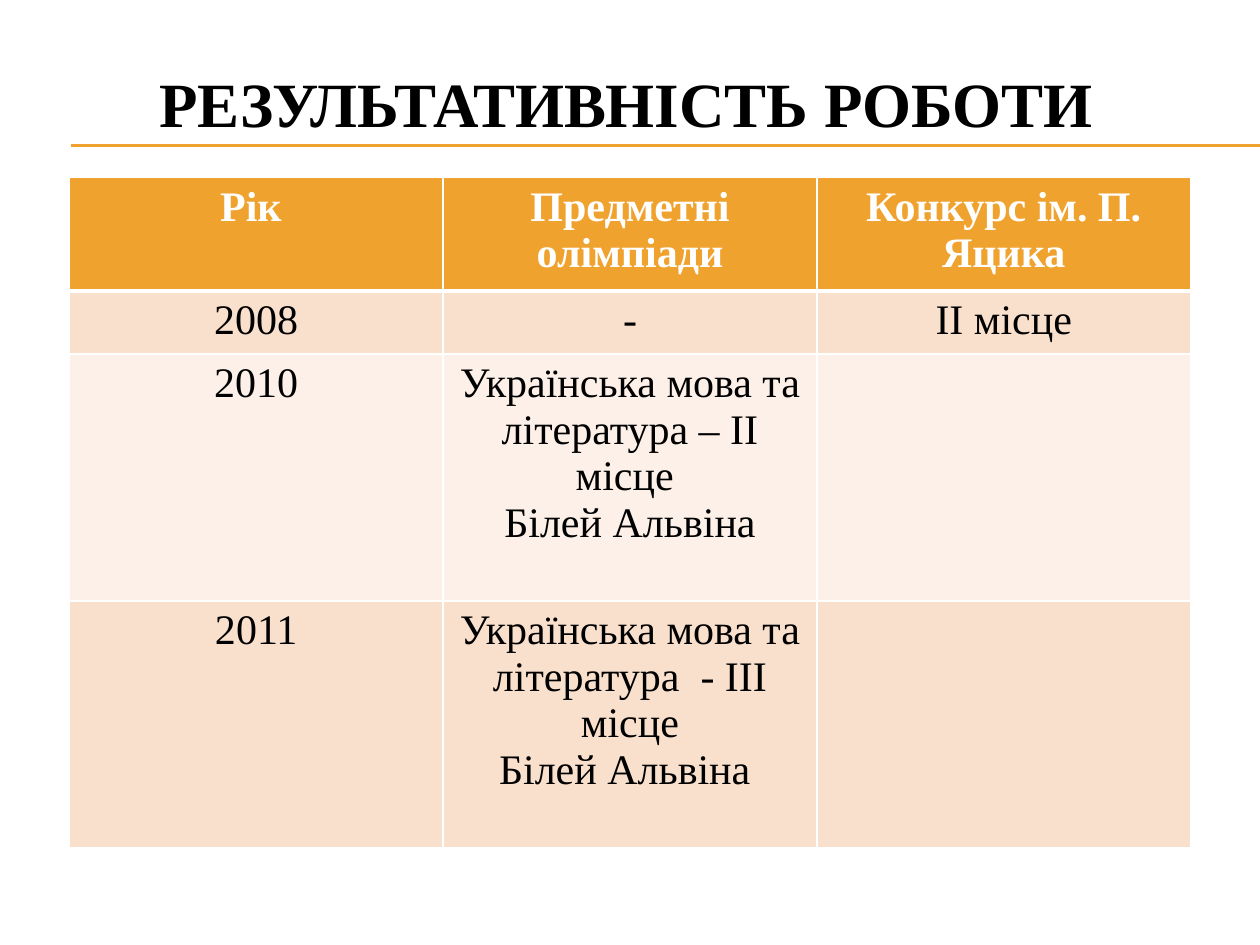
from dataclasses import dataclass
from lxml import etree
from pptx import Presentation
from pptx.dml.color import RGBColor
from pptx.enum.shapes import MSO_CONNECTOR
from pptx.enum.text import MSO_ANCHOR, PP_ALIGN
from pptx.oxml.ns import qn
from pptx.util import Inches, Pt

CENTER = PP_ALIGN.CENTER
MIDDLE = MSO_ANCHOR.MIDDLE
STRAIGHT = MSO_CONNECTOR.STRAIGHT


@dataclass(frozen=True)
class Theme:
    font: str = "Times New Roman"
    ink: str = "000000"
    white: str = "FFFFFF"
    gold: str = "F0A22E"
    bands: tuple = ("F9E0CD", "FCF0E8")
    title: int = 36
    body: int = 24
    rule: float = 0.75
    thin: int = 1
    thick: int = 3


class Page:
    def __init__(self, slide, theme):
        self.slide = slide
        self.theme = theme

    def style(self, frame, size, color, bold):
        form = {"name": self.theme.font, "size": Pt(size), "bold": bold}
        for para in frame.paragraphs:
            para.alignment = CENTER
            for run in para.runs:
                for key, value in form.items():
                    setattr(run.font, key, value)
                run.font.color.rgb = RGBColor.from_string(color)

    def title(self, text, left, top, width, height):
        box = self.slide.shapes.add_textbox(
            Inches(left), Inches(top), Inches(width), Inches(height))
        frame = box.text_frame
        frame.word_wrap = True
        frame.vertical_anchor = MIDDLE
        frame.text = text
        self.style(frame, self.theme.title, self.theme.ink, True)

    def rule(self, left, right, y):
        line = self.slide.shapes.add_connector(
            STRAIGHT, Inches(left), Inches(y), Inches(right), Inches(y))
        line.line.color.rgb = RGBColor.from_string(self.theme.gold)
        line.line.width = Pt(self.theme.rule)
        etree.SubElement(line._element.spPr, qn("a:effectLst"))

    def border(self, cell, widths):
        props = cell._tc.get_or_add_tcPr()
        for side, width in widths.items():
            edge = etree.SubElement(props, qn(f"a:ln{side}"), w=str(Pt(width)))
            fill = etree.SubElement(edge, qn("a:solidFill"))
            etree.SubElement(fill, qn("a:srgbClr"), val=self.theme.white)

    def table(self, rows, left, top, width, heights):
        theme = self.theme
        count = len(rows[0])
        grid = self.slide.shapes.add_table(
            len(rows), count, Inches(left), Inches(top),
            Inches(width), Inches(sum(heights))).table
        for col in grid.columns:
            col.width = Inches(width / count)
        for i, (row, height) in enumerate(zip(rows, heights)):
            grid.rows[i].height = Inches(height)
            head = i == 0
            back = theme.gold if head else theme.bands[(i - 1) % 2]
            widths = dict.fromkeys("LRTB", theme.thin)
            if head:
                widths["B"] = theme.thick
            elif i == 1:
                widths["T"] = theme.thick
            for j, text in enumerate(row):
                cell = grid.cell(i, j)
                cell.text = text
                self.border(cell, widths)
                cell.fill.solid()
                cell.fill.fore_color.rgb = RGBColor.from_string(back)
                self.style(cell.text_frame, theme.body,
                           theme.white if head else theme.ink, head)


def main():
    deck = Presentation()
    deck.slide_width = Inches(10)
    deck.slide_height = Inches(7.5)
    page = Page(deck.slides.add_slide(deck.slide_layouts[6]), Theme())
    for y in (1.15, 1.16):
        page.rule(0.56, 10, y)
    page.title("РЕЗУЛЬТАТИВНІСТЬ РОБОТИ", 0.47, 0.39, 9, 0.85)
    rows = [
        ("Рік ", "Предметні олімпіади", "Конкурс ім. П. Яцика"),
        ("2008", "-", "ІІ місце"),
        ("2010", "Українська мова та література – ІІ місце \nБілей Альвіна", ""),
        ("2011", "Українська мова та література  - ІІІ місце\nБілей Альвіна ", ""),
    ]
    page.table(rows, 0.55, 1.41, 8.9, (0.84, 0.47, 1.96, 1.96))
    deck.save("out.pptx")


if __name__ == "__main__":
    main()
